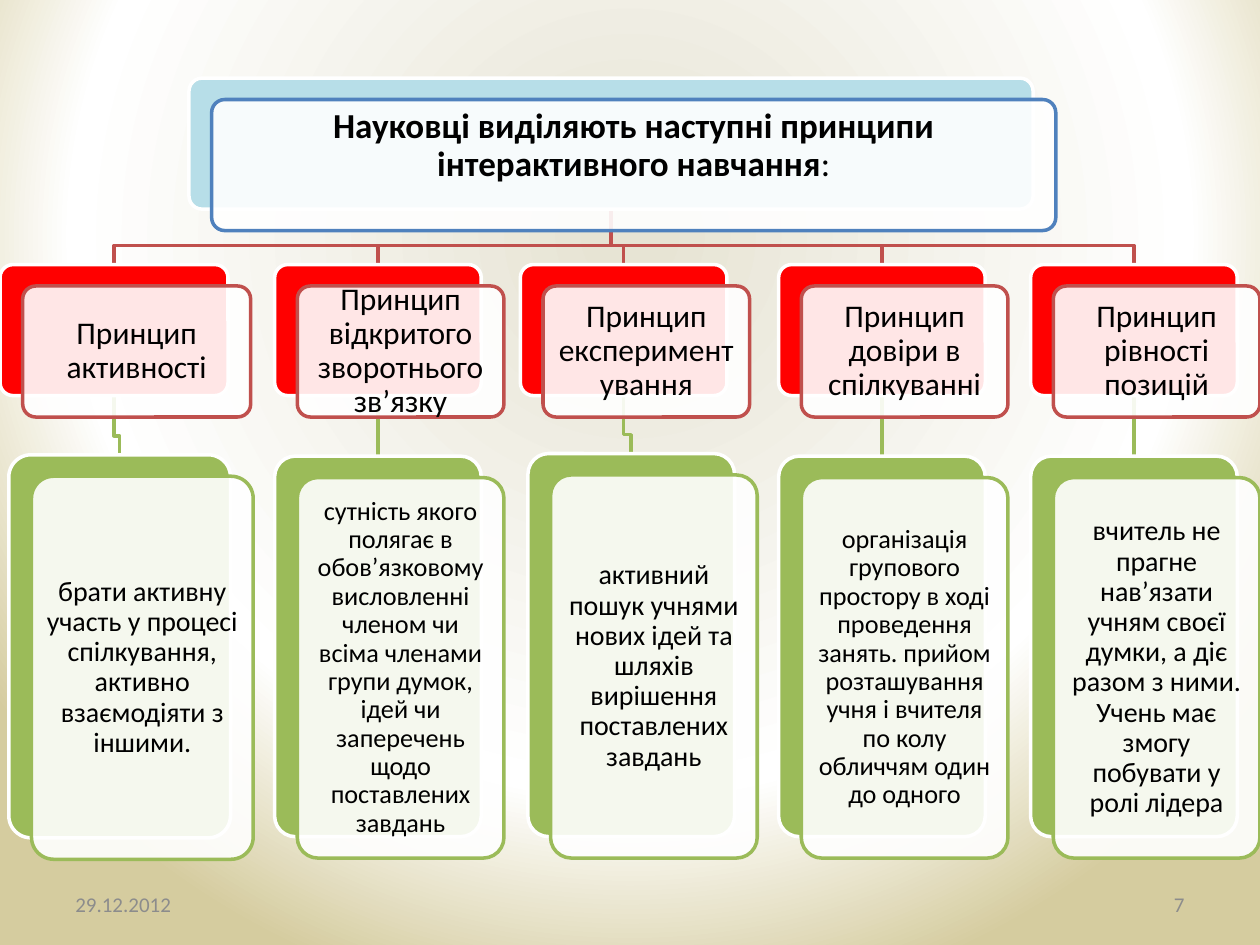
from pptx import Presentation
from pptx.dml.color import RGBColor
from pptx.enum.shapes import MSO_CONNECTOR as Conn, MSO_SHAPE as Form
from pptx.enum.text import MSO_ANCHOR as Anchor, PP_ALIGN as Align
from pptx.oxml import parse_xml
from pptx.oxml.ns import nsdecls, qn
from pptx.util import Inches, Pt
from lxml.etree import SubElement

RED, GREEN, BLUE, WHITE = "C0504D", "9BBB59", "4F81BD", "FFFFFF"
TITLE = (1.5, 0.62, 6.7, 1.04)
HEAD_Y, HEAD_H, BUS_Y = 2.1, 1.04, 1.95
SHIFT_X, SHIFT_Y = 0.18, 0.17
STOPS = ((3, "E7E4D4"), (71, WHITE), (100, "D5CC9F"))

COLUMNS = [
    (0, 1.81, "Принцип активності", (0.07, 3.61, 1.76, 3.04), 16,
     "брати активну участь у процесі спілкування, активно взаємодіяти з іншими."),
    (2.18, 1.64, "Принцип відкритого зворотнього зв’язку", (2.18, 3.62, 1.64, 3.02), 15,
     "сутність якого полягає в обов’язковому висловленні членом чи всіма членами "
     "групи думок, ідей чи заперечень щодо поставлених завдань"),
    (4.13, 1.64, "Принцип експериментування", (4.19, 3.6, 1.64, 3.04), 16,
     "активний пошук учнями нових ідей та шляхів вирішення поставлених завдань"),
    (6.18, 1.64, "Принцип довіри в спілкуванні", (6.18, 3.62, 1.64, 3.02), 15,
     "організація групового простору в ході проведення занять. прийом "
     "розташування учня і вчителя по колу обличчям один до одного"),
    (8.18, 1.64, "Принцип рівності позицій", (8.18, 3.62, 1.64, 3.02), 16,
     "вчитель не прагне нав’язати учням своєї думки, а діє разом з ними. "
     "Учень має змогу побувати у ролі лідера"),
]


def color(code):
    return RGBColor.from_string(code)


def stroke(item, code):
    item.line.color.rgb = color(code)
    item.line.width = Pt(2)


def backdrop(slide):
    slide.background.fill.solid()
    stops = "".join(f'<a:gs pos="{pos * 1000}"><a:srgbClr val="{code}"/></a:gs>'
                    for pos, code in STOPS)
    grad = parse_xml(
        f'<a:gradFill {nsdecls("a")} rotWithShape="1"><a:gsLst>{stops}</a:gsLst>'
        '<a:path path="circle"><a:fillToRect l="20000" t="10000" r="20000" b="60000"/>'
        '</a:path></a:gradFill>')
    props = slide._element.find(".//" + qn("p:bgPr"))
    props.replace(props.find(qn("a:solidFill")), grad)


def write(shape, text, size=18, code="000000", bold=False, tail="",
          align=Align.CENTER, space=0.9, pad=0.07, foot=None):
    frame = shape.text_frame
    frame.word_wrap = True
    frame.vertical_anchor = Anchor.MIDDLE
    frame.margin_left = frame.margin_right = frame.margin_top = Inches(pad)
    frame.margin_bottom = Inches(pad if foot is None else foot)
    para = frame.paragraphs[0]
    para.alignment = align
    para.line_spacing = space
    for part, heavy in ((text, bold), (tail, False)):
        if part:
            run = para.add_run()
            run.text = part
            run.font.name = "Calibri"
            run.font.size = Pt(size)
            run.font.bold = heavy
            run.font.color.rgb = color(code)


def box(slide, rect, fill, line, alpha=None):
    shape = slide.shapes.add_shape(Form.ROUNDED_RECTANGLE, *map(Inches, rect))
    shape.adjustments[0] = 0.1
    shape.shadow.inherit = False
    shape.fill.solid()
    shape.fill.fore_color.rgb = color(fill)
    if alpha:
        tint = shape._element.spPr.find(qn("a:solidFill"))[0]
        SubElement(tint, qn("a:alpha"), val=str(alpha * 1000))
    stroke(shape, line)
    return shape


def card(slide, rect, fill, edge, text, **style):
    x, y, w, h = rect
    back = box(slide, rect, fill, WHITE)
    front = box(slide, (x + SHIFT_X, y + SHIFT_Y, w, h), WHITE, edge, alpha=90)
    write(front, text, **style)
    return back


def bend(slide, x1, y1, x2, y2, mid, code):
    maker = slide.shapes.build_freeform(Inches(x1), Inches(y1))
    turns = ((x1, mid), (x2, mid), (x2, y2))
    maker.add_line_segments([(Inches(x), Inches(y)) for x, y in turns], close=False)
    shape = maker.convert_to_shape()
    shape.shadow.inherit = False
    shape.fill.background()
    stroke(shape, code)


def link(slide, x, y1, y2, code):
    line = slide.shapes.add_connector(
        Conn.STRAIGHT, Inches(x), Inches(y1), Inches(x), Inches(y2))
    SubElement(line._element.spPr, qn("a:effectLst"))
    stroke(line, code)
    return line


def branch(slide, column):
    left, wide, _, body, _, _ = column
    mid, goal = left + wide / 2, body[0] + body[2] / 2
    base = HEAD_Y + HEAD_H
    x, y, w, h = TITLE
    bend(slide, x + w / 2, y + h, mid, HEAD_Y, BUS_Y, RED)
    if abs(mid - goal) < 0.01:
        return link(slide, mid, base, body[1], GREEN)
    bend(slide, mid, base, goal, body[1], body[1] - 0.15, GREEN)


def footer(slide, x, text, align):
    area = slide.shapes.add_textbox(*map(Inches, (x, 6.95, 2.33, 0.4)))
    write(area, text, size=12, code="8C8C8C", align=align, space=1, pad=0.1, foot=0.05)


def main():
    deck = Presentation()
    deck.slide_width, deck.slide_height = Inches(10), Inches(7.5)
    slide = deck.slides.add_slide(deck.slide_layouts[6])
    backdrop(slide)
    footer(slide, 0.5, "29.12.2012", Align.LEFT)
    footer(slide, 7.17, "7", Align.RIGHT)
    links = [branch(slide, column) for column in COLUMNS]
    card(slide, TITLE, "B7DEE8", BLUE,
         "Науковці виділяють наступні принципи інтерактивного навчання",
         tail=":", size=20, bold=True, pad=0.08, foot=0.38)
    for line, (left, wide, name, body, size, text) in zip(links, COLUMNS):
        head = card(slide, (left, HEAD_Y, wide, HEAD_H), "FF0000", RED, name)
        base = card(slide, body, GREEN, GREEN, text, size=size,
                    pad=0.06 if size == 15 else 0.07)
        if line:
            line.begin_connect(head, 2)
            line.end_connect(base, 0)
    deck.save("out.pptx")


if __name__ == "__main__":
    main()
